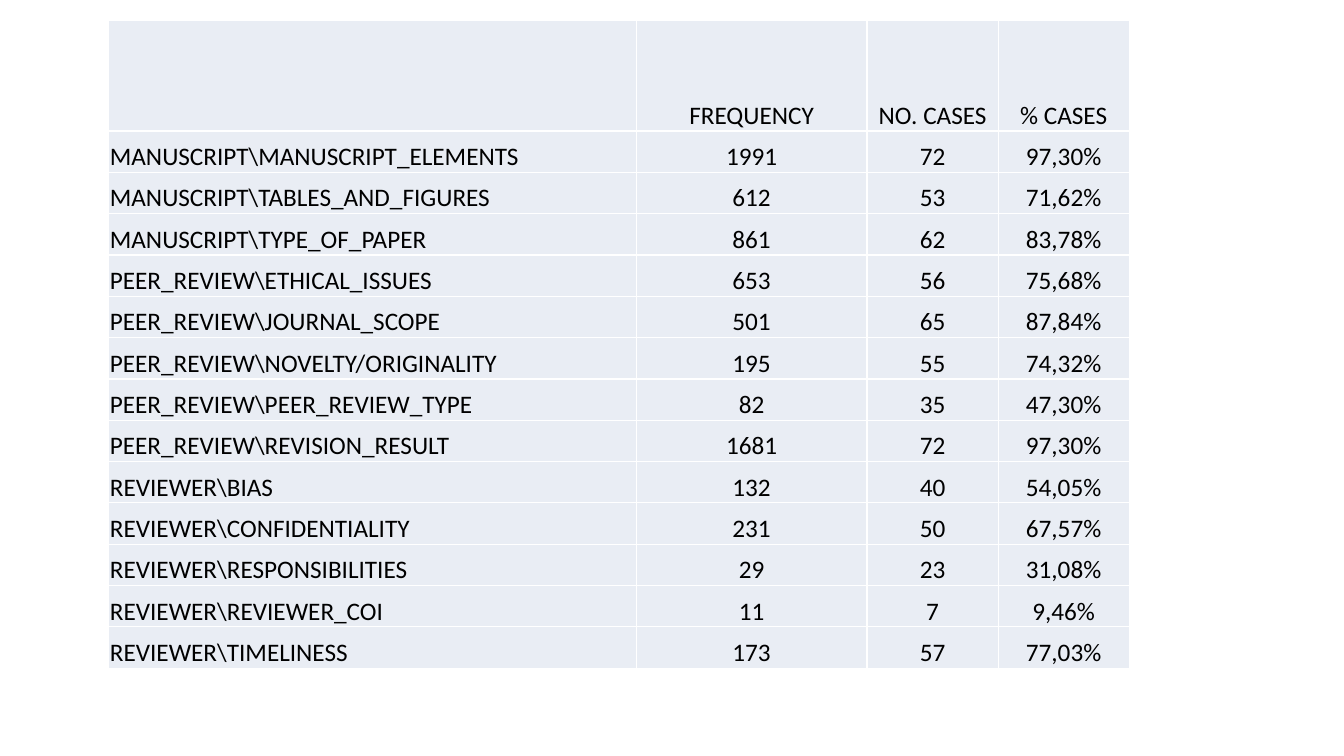
from lxml import etree
from pptx import Presentation
from pptx import util as u
from pptx.dml import color
from pptx.enum import text
from pptx.oxml import ns


def rgb(value):
    return color.RGBColor.from_string(value)


def add_border(cell, side, value):
    line = etree.SubElement(cell._tc.get_or_add_tcPr(), ns.qn(f"a:ln{side}"), w=str(u.Pt(1)))
    fill = etree.SubElement(line, ns.qn("a:solidFill"))
    etree.SubElement(fill, ns.qn("a:srgbClr"), val=value)


rows = [
    ("", "FREQUENCY", "NO. CASES", "% CASES"),
    (r"MANUSCRIPT\MANUSCRIPT_ELEMENTS", "1991", "72", "97,30%"),
    (r"MANUSCRIPT\TABLES_AND_FIGURES", "612", "53", "71,62%"),
    (r"MANUSCRIPT\TYPE_OF_PAPER", "861", "62", "83,78%"),
    (r"PEER_REVIEW\ETHICAL_ISSUES", "653", "56", "75,68%"),
    (r"PEER_REVIEW\JOURNAL_SCOPE", "501", "65", "87,84%"),
    (r"PEER_REVIEW\NOVELTY/ORIGINALITY", "195", "55", "74,32%"),
    (r"PEER_REVIEW\PEER_REVIEW_TYPE", "82", "35", "47,30%"),
    (r"PEER_REVIEW\REVISION_RESULT", "1681", "72", "97,30%"),
    (r"REVIEWER\BIAS", "132", "40", "54,05%"),
    (r"REVIEWER\CONFIDENTIALITY", "231", "50", "67,57%"),
    (r"REVIEWER\RESPONSIBILITIES", "29", "23", "31,08%"),
    (r"REVIEWER\REVIEWER_COI", "11", "7", "9,46%"),
    (r"REVIEWER\TIMELINESS", "173", "57", "77,03%"),
]
widths = [5.23, 2.29, 1.3, 1.3]
header_height, row_height = 1.1, 0.41
cell_format = {
    "vertical_anchor": text.MSO_ANCHOR.BOTTOM,
    "margin_left": u.Inches(0.01),
    "margin_top": u.Inches(0.01),
    "margin_right": u.Inches(0.01),
    "margin_bottom": u.Inches(0),
}
font_format = {"name": "Calibri", "size": u.Pt(18), "bold": False}

deck = Presentation()
deck.slide_width, deck.slide_height = u.Inches(13.33), u.Inches(7.5)
page = deck.slides.add_slide(deck.slide_layouts[6])

table = page.shapes.add_table(
    len(rows), len(widths), u.Inches(1.08), u.Inches(0.2),
    u.Inches(sum(widths)), u.Inches(header_height + row_height * (len(rows) - 1)),
).table
table.first_row = table.horz_banding = False
for column, width in zip(table.columns, widths):
    column.width = u.Inches(width)

for row_index, values in enumerate(rows):
    table.rows[row_index].height = u.Inches(row_height if row_index else header_height)
    for column_index, value in enumerate(values):
        cell = table.cell(row_index, column_index)
        for name, setting in cell_format.items():
            setattr(cell, name, setting)
        for side in "LRTB":
            add_border(cell, side, "FFFFFF")
        cell.fill.solid()
        cell.fill.fore_color.rgb = rgb("E9EDF4")
        if not value:
            continue
        para = cell.text_frame.paragraphs[0]
        para.alignment = text.PP_ALIGN.CENTER if column_index else text.PP_ALIGN.LEFT
        span = para.add_run()
        span.text = value
        for name, setting in font_format.items():
            setattr(span.font, name, setting)
        span.font.color.rgb = rgb("000000")

deck.save("out.pptx")
